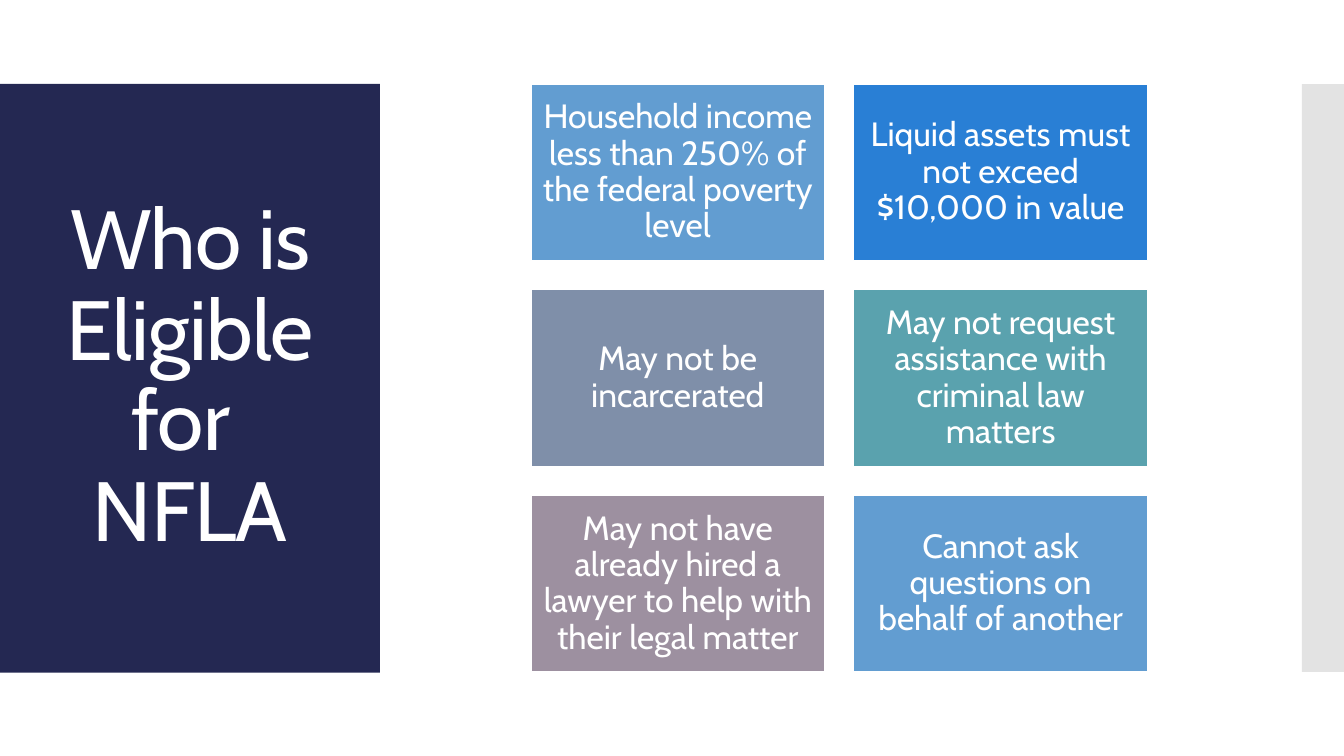
from dataclasses import dataclass

from lxml import etree
from pptx import Presentation
from pptx.dml.color import RGBColor
from pptx.enum.shapes import MSO_SHAPE
from pptx.enum.text import MSO_ANCHOR, PP_ALIGN
from pptx.oxml.ns import qn
from pptx.util import Pt

RECT = MSO_SHAPE.RECTANGLE
MIDDLE = MSO_ANCHOR.MIDDLE
CENTER = PP_ALIGN.CENTER


@dataclass(frozen=True)
class Theme:
    font: str = "Cabin"
    title_size: int = 60
    card_size: int = 24
    white: str = "FFFFFF"
    navy: str = "242852"
    gray: str = "C8C8C8"
    sky: str = "629DD1"
    blue: str = "297FD5"
    slate: str = "7F8FA9"
    teal: str = "5AA2AE"
    mauve: str = "9D90A0"


theme = Theme()


def add_box(left, top, width, height, fill):
    sp = s.shapes.add_shape(RECT, Pt(left), Pt(top), Pt(width), Pt(height))
    sp.shadow.inherit = False
    sp.fill.solid()
    sp.fill.fore_color.rgb = RGBColor.from_string(fill)
    sp.line.fill.background()
    return sp


def set_text(sp, text, size, inset_x, inset_y):
    tf = sp.text_frame
    tf.word_wrap = True
    tf.vertical_anchor = MIDDLE
    tf.margin_left = tf.margin_right = Pt(inset_x)
    tf.margin_top = tf.margin_bottom = Pt(inset_y)
    p = tf.paragraphs[0]
    p.text = text
    p.alignment = CENTER
    p.line_spacing = 0.9
    for r in p.runs:
        r.font.name = theme.font
        r.font.size = Pt(size)
        r.font.color.rgb = RGBColor.from_string(theme.white)
    return p


prs = Presentation()
prs.slide_width = Pt(960)
prs.slide_height = Pt(540)
s = prs.slides.add_slide(prs.slide_layouts[6])

# Half-transparent strip at the right edge
strip = add_box(930, 60, 30, 420, theme.gray)
color = strip.fill._xPr.find(qn("a:solidFill"))[0]
etree.SubElement(color, qn("a:alpha")).set("val", "50000")

# Title panel with slightly tightened letters
panel = add_box(0, 60, 271.4, 420.5, theme.navy)
title = set_text(panel, "Who is Eligible for \vNFLA", theme.title_size, 27, 3.6)
for r in title.runs:
    r.font._element.set("spc", "-60")

# Eligibility cards, two to a row
cards = [
    ("Household income less than 250% of the federal poverty level", theme.sky),
    ("Liquid assets must not exceed $10,000 in value", theme.blue),
    ("May not be incarcerated", theme.slate),
    ("May not request assistance with criminal law matters", theme.teal),
    ("May not have already hired a lawyer to help with their legal matter", theme.mauve),
    ("Cannot ask questions on behalf of another", theme.sky),
]
COLS = 2
LEFT, TOP = 379.3, 60
CARD_W, CARD_H = 209.7, 126
STEP_X, STEP_Y = 230.6, 147

for i, (text, fill) in enumerate(cards):
    row, col = divmod(i, COLS)
    card = add_box(LEFT + col * STEP_X, TOP + row * STEP_Y, CARD_W, CARD_H, fill)
    card.line.color.rgb = RGBColor.from_string(theme.white)
    card.line.width = Pt(0.85)
    set_text(card, text, theme.card_size, 7.2, 7.2)

prs.save("out.pptx")
